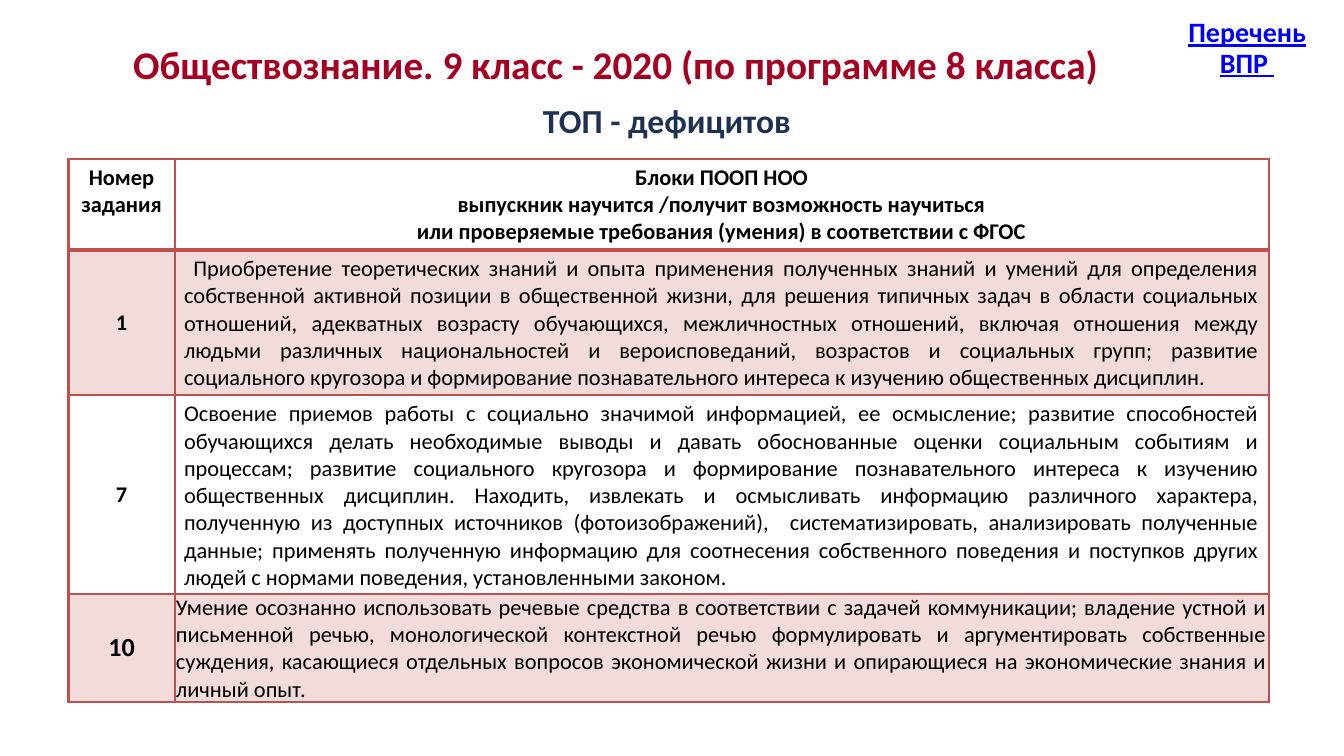
from lxml import etree
from pptx import Presentation
from pptx.dml.color import RGBColor
from pptx.enum.text import MSO_ANCHOR, PP_ALIGN
from pptx.oxml.ns import qn
from pptx.util import Inches, Pt

LEFT, CENTER, JUSTIFY = PP_ALIGN.LEFT, PP_ALIGN.CENTER, PP_ALIGN.JUSTIFY
TOP, MIDDLE = MSO_ANCHOR.TOP, MSO_ANCHOR.MIDDLE

CRIMSON = RGBColor(0xA5, 0x00, 0x21)
NAVY = RGBColor(0x1D, 0x32, 0x52)
BLUE = RGBColor(0x00, 0x00, 0xFF)
BLACK = RGBColor(0x00, 0x00, 0x00)
BRICK = RGBColor(0xC0, 0x50, 0x4D)
THIN, THICK = 1.25, 2.25

HEADERS = [
    ["Номер задания"],
    ["Блоки ПООП НОО",
     "выпускник научится /получит возможность научиться",
     "или проверяемые требования (умения) в соответствии с ФГОС"],
]
TASKS = [
    ("1", " Приобретение теоретических знаний и опыта применения полученных знаний "
     "и умений для определения собственной активной позиции в общественной жизни, "
     "для решения типичных задач в области социальных отношений, адекватных возрасту "
     "обучающихся, межличностных отношений, включая отношения между людьми различных "
     "национальностей и вероисповеданий, возрастов и социальных групп; развитие "
     "социального кругозора и формирование познавательного интереса к изучению "
     "общественных дисциплин. "),
    ("7", "Освоение приемов работы с социально значимой информацией, ее осмысление; "
     "развитие способностей обучающихся делать необходимые выводы и давать "
     "обоснованные оценки социальным событиям и процессам; развитие социального "
     "кругозора и формирование познавательного интереса к изучению общественных "
     "дисциплин. Находить, извлекать и осмысливать информацию различного характера, "
     "полученную из доступных источников (фотоизображений),  систематизировать, "
     "анализировать полученные данные; применять полученную информацию для "
     "соотнесения собственного поведения и поступков других людей с нормами "
     "поведения, установленными законом."),
    ("10", "Умение осознанно использовать речевые средства в соответствии с задачей "
     "коммуникации; владение устной и письменной речью, монологической контекстной "
     "речью формулировать и аргументировать собственные суждения, касающиеся "
     "отдельных вопросов экономической жизни и опирающиеся на экономические знания "
     "и личный опыт. "),
]


class SlideBuilder:
    font = "Calibri"
    insets = (0.07, 0.04)

    def __init__(self, slide):
        self.slide = slide

    def set_insets(self, target, x, y):
        target.margin_left = target.margin_right = Inches(x)
        target.margin_top = target.margin_bottom = Inches(y)

    def run(self, p, text, size, color, bold=True, underline=None):
        r = p.add_run()
        r.text = text
        r.font.name = self.font
        r.font.size = Pt(size)
        r.font.color.rgb = color
        r.font.bold = bold
        r.font.underline = underline

    def text(self, box, text, size, color, align=CENTER, underline=None):
        tf = self.slide.shapes.add_textbox(*map(Inches, box)).text_frame
        tf.word_wrap = True
        self.set_insets(tf, *self.insets)
        p = tf.paragraphs[0]
        p.alignment = align
        p.line_spacing = 0.9
        self.run(p, text, size, color, underline=underline)

    def table(self, left, top, widths, heights):
        frame = self.slide.shapes.add_table(
            len(heights), len(widths), Inches(left), Inches(top),
            Inches(sum(widths)), Inches(sum(heights)))
        table = frame.table
        table.first_row = table.horz_banding = False
        for column, width in zip(table.columns, widths):
            column.width = Inches(width)
        for row, height in zip(table.rows, heights):
            row.height = Inches(height)
        return table

    def borders(self, cell, top, bottom):
        tc_pr = cell._tc.get_or_add_tcPr()
        for side, width in (("L", THIN), ("R", THIN), ("T", top), ("B", bottom)):
            ln = etree.SubElement(tc_pr, qn("a:ln" + side), w=str(Pt(width)))
            fill = etree.SubElement(ln, qn("a:solidFill"))
            etree.SubElement(fill, qn("a:srgbClr"), val=str(BRICK))

    def tint(self, cell, percent):
        cell.fill.solid()
        cell.fill.fore_color.rgb = BRICK
        color = cell._tc.tcPr.find(qn("a:solidFill")).find(qn("a:srgbClr"))
        etree.SubElement(color, qn("a:alpha"), val=str(percent * 1000))

    def cell(self, cell, lines, size=12, bold=True, align=CENTER, anchor=TOP,
             insets=insets, shaded=False, top=THIN, bottom=THIN):
        self.borders(cell, top, bottom)
        if shaded:
            self.tint(cell, 20)
        else:
            cell.fill.background()
        cell.vertical_anchor = anchor
        self.set_insets(cell, *insets)
        tf = cell.text_frame
        for i, line in enumerate(lines):
            p = tf.add_paragraph() if i else tf.paragraphs[0]
            p.alignment = align
            self.run(p, line, size, BLACK, bold)


def main():
    prs = Presentation()
    prs.slide_width = Inches(10)
    prs.slide_height = prs.slide_width * 9 // 16
    s = SlideBuilder(prs.slides.add_slide(prs.slide_layouts[6]))

    # Headings
    s.text((0.84, 0.3, 7.55, 0.44),
           "Обществознание. 9 класс - 2020 (по программе 8 класса) ", 21, CRIMSON)
    s.text((3.97, 0.74, 2.38, 0.49), "ТОП - дефицитов", 18, NAVY, LEFT)

    # Table header
    table = s.table(0.51, 1.18, (0.79, 8.14), (0.68, 1.07, 1.48, 0.8))
    for col, lines in enumerate(HEADERS):
        s.cell(table.cell(0, col), lines, bottom=THICK)

    # Task rows: odd rows shaded, the last one set tight
    for row, (number, skill) in enumerate(TASKS, start=1):
        last = row == len(TASKS)
        look = {"shaded": row % 2 == 1, "top": THICK if row == 1 else THIN}
        s.cell(table.cell(row, 0), [number], size=14 if last else 12,
               anchor=MIDDLE, **look)
        s.cell(table.cell(row, 1), [skill], bold=False, align=JUSTIFY,
               insets=(0.01, 0) if last else s.insets, **look)

    # Corner label
    s.text((8.68, 0.1, 1.2, 0.44), "Перечень ВПР ", 15, BLUE, underline=True)

    prs.save("out.pptx")


if __name__ == "__main__":
    main()
